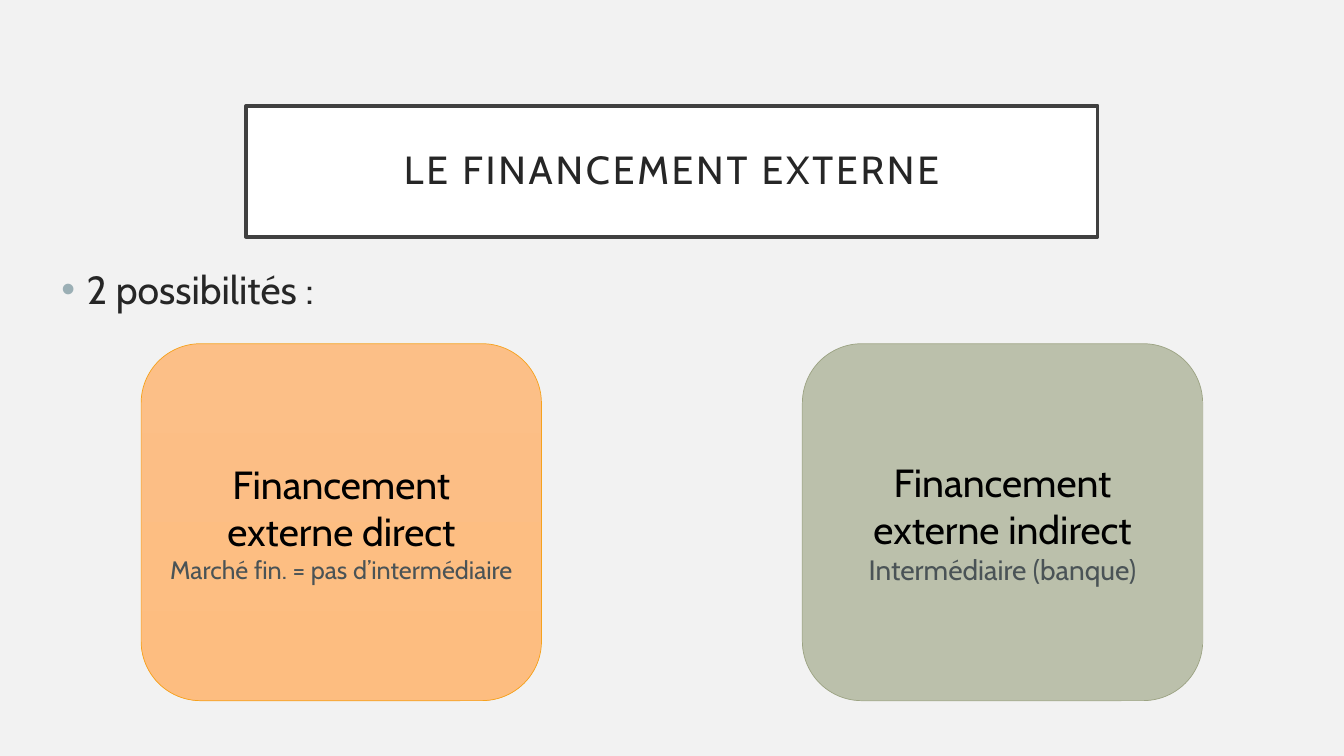
import dataclasses
import typing

import lxml.etree
import pptx
import pptx.dml.color
import pptx.enum.shapes
import pptx.enum.text
import pptx.oxml.ns
import pptx.util

Pt = pptx.util.Pt
Align = pptx.enum.text.PP_ALIGN
Anchor = pptx.enum.text.MSO_ANCHOR
ShapeKind = pptx.enum.shapes.MSO_SHAPE


@dataclasses.dataclass(frozen=True)
class Theme:
    """Colours, font and type sizes of the slide."""

    font: str = "Cabin"
    background: str = "F2F2F2"
    title_fill: str = "FFFFFF"
    title_line: str = "404040"
    text: str = "262626"
    bullet: str = "9BAFB5"
    card_heading: str = "000000"
    card_detail: str = "4A5356"
    heading_size: float = 28
    title_line_width: float = 2.5
    card_line_width: float = 0.5


@dataclasses.dataclass(frozen=True)
class Card:
    """One financing option shown as a rounded card."""

    heading: str
    detail: str
    detail_size: float
    gradient: tuple[str, str]
    line: str


THEME = Theme()
CARDS = (
    Card("Financement externe direct", "Marché fin. = pas d’intermédiaire", 18,
         ("FCBF87", "FDBD80"), "F6A21D"),
    Card("Financement externe indirect", "Intermédiaire (banque)", 20,
         ("BBC0AB", "B9BEA8"), "9CA383"),
)
CARD_LEFT, CARD_TOP, CARD_STEP = 100.8, 245.5, 472.3
CARD_WIDTH, CARD_HEIGHT = 286, 255


def rgb(value: str) -> pptx.dml.color.RGBColor:
    """Return the colour for a hexadecimal value."""
    return pptx.dml.color.RGBColor.from_string(value)


def write_text(paragraph: typing.Any, text: str, *, color: str,
               size: float = THEME.heading_size, align: Align = Align.CENTER,
               tracking: float = 0) -> None:
    """Add formatted text to a paragraph."""
    paragraph.alignment = align
    run = paragraph.add_run()
    run.text = text
    run.font.name = THEME.font
    run.font.size = Pt(size)
    run.font.color.rgb = rgb(color)
    if tracking:
        run._r.get_or_add_rPr().set("spc", str(int(tracking * 100)))


def add_bullet(paragraph: typing.Any, indent: float) -> None:
    """Give a paragraph a coloured bullet with a hanging indent."""
    properties = paragraph._p.get_or_add_pPr()
    properties.set("marL", str(Pt(indent)))
    properties.set("indent", str(-Pt(indent)))
    qualified = pptx.oxml.ns.qn
    color = lxml.etree.SubElement(properties, qualified("a:buClr"))
    lxml.etree.SubElement(color, qualified("a:srgbClr"), val=THEME.bullet)
    lxml.etree.SubElement(properties, qualified("a:buFont"), typeface="Arial")
    lxml.etree.SubElement(properties, qualified("a:buChar"), char="•")


def add_panel(slide: typing.Any, kind: ShapeKind, left: float, top: float,
              width: float, height: float, line: str, line_width: float) -> typing.Any:
    """Add an outlined shape with middle-anchored wrapped text."""
    shape = slide.shapes.add_shape(kind, Pt(left), Pt(top), Pt(width), Pt(height))
    shape.shadow.inherit = False
    shape.line.color.rgb = rgb(line)
    shape.line.width = Pt(line_width)
    shape.text_frame.word_wrap = True
    shape.text_frame.vertical_anchor = Anchor.MIDDLE
    return shape


def add_title(slide: typing.Any) -> None:
    """Add the framed title."""
    shape = add_panel(slide, ShapeKind.RECTANGLE, 175.7, 75.6, 608.4, 93.6,
                      THEME.title_line, THEME.title_line_width)
    shape.fill.solid()
    shape.fill.fore_color.rgb = rgb(THEME.title_fill)
    frame = shape.text_frame
    frame.margin_left = frame.margin_right = Pt(14.4)
    frame.margin_top = frame.margin_bottom = Pt(14.4)
    paragraph = frame.paragraphs[0]
    paragraph.line_spacing = 0.9
    write_text(paragraph, "LE FINANCEMENT EXTERNE", color=THEME.text, tracking=2)


def add_introduction(slide: typing.Any) -> None:
    """Add the bulleted introduction."""
    box = slide.shapes.add_textbox(Pt(36.7), Pt(185.8), Pt(608.4), Pt(244))
    box.text_frame.word_wrap = True
    paragraph = box.text_frame.paragraphs[0]
    paragraph.space_before = Pt(10)
    add_bullet(paragraph, 18)
    write_text(paragraph, "2 possibilités :", color=THEME.text, align=Align.LEFT)


def add_card(slide: typing.Any, card: Card, left: float) -> None:
    """Add one financing card."""
    shape = add_panel(slide, ShapeKind.ROUNDED_RECTANGLE, left, CARD_TOP,
                      CARD_WIDTH, CARD_HEIGHT, card.line, THEME.card_line_width)
    shape.fill.gradient()
    shape.fill.gradient_angle = 270
    for stop, color in zip(shape.fill.gradient_stops, card.gradient):
        stop.color.rgb = rgb(color)
    frame = shape.text_frame
    write_text(frame.paragraphs[0], card.heading, color=THEME.card_heading)
    write_text(frame.add_paragraph(), card.detail, color=THEME.card_detail,
               size=card.detail_size)


def main() -> None:
    """Build and save the presentation."""
    presentation = pptx.Presentation()
    presentation.slide_width = Pt(960)
    presentation.slide_height = Pt(540)
    slide = presentation.slides.add_slide(presentation.slide_layouts[6])
    slide.background.fill.solid()
    slide.background.fill.fore_color.rgb = rgb(THEME.background)
    add_title(slide)
    add_introduction(slide)
    for index, card in enumerate(CARDS):
        add_card(slide, card, CARD_LEFT + index * CARD_STEP)
    presentation.save("out.pptx")


if __name__ == "__main__":
    main()
